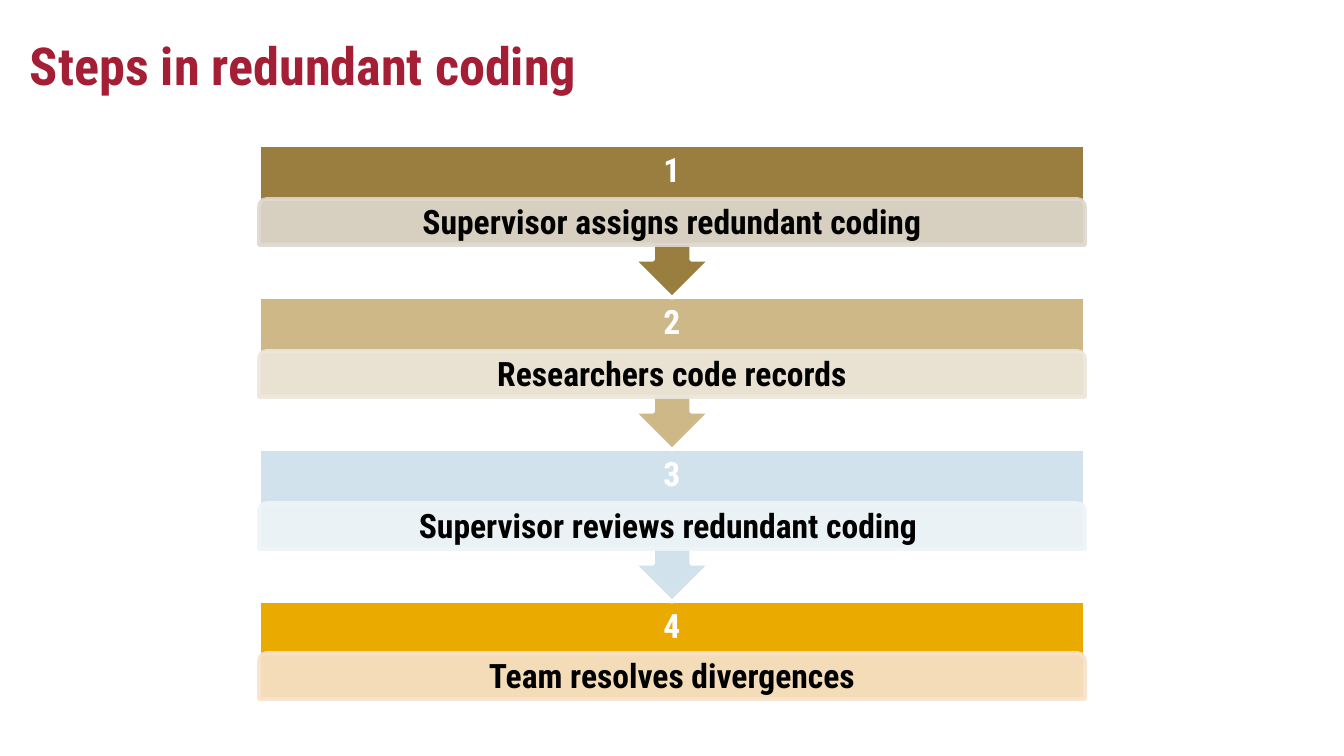
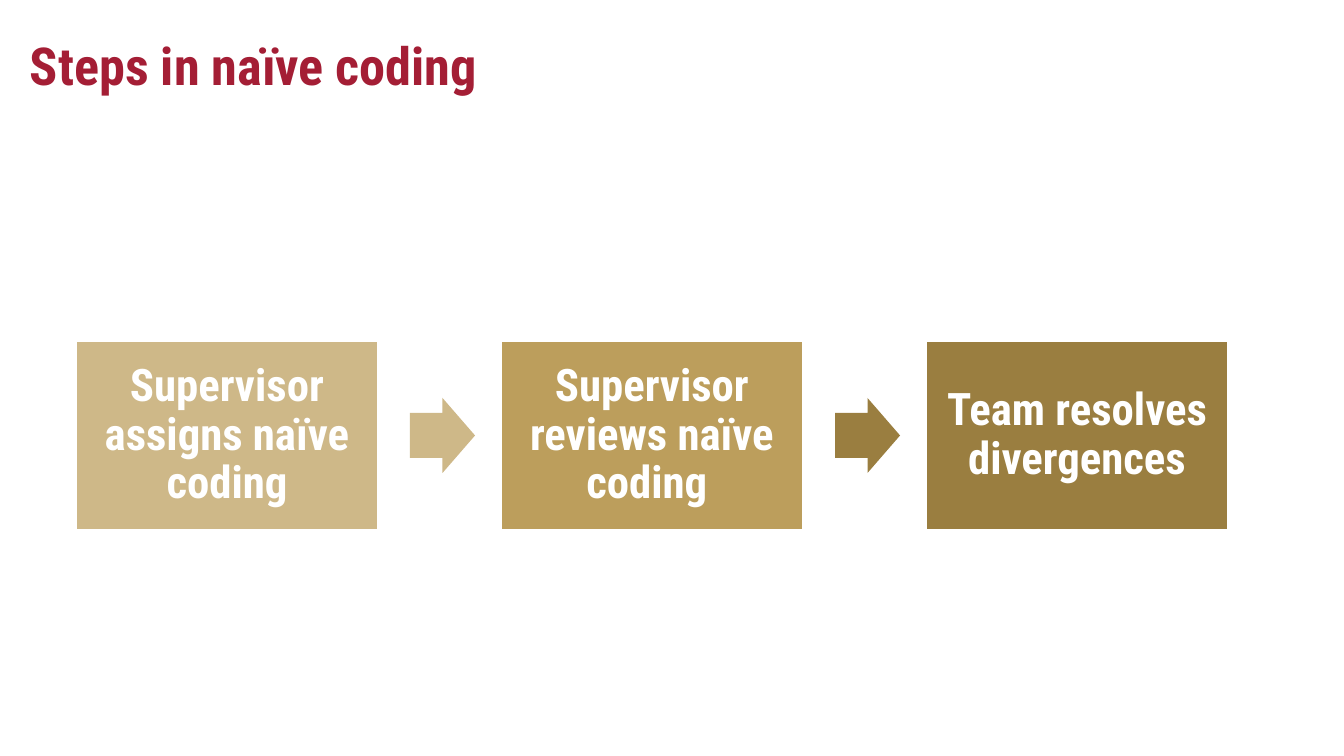
from dataclasses import dataclass

from lxml import etree
from pptx import Presentation
from pptx.dml.color import RGBColor
from pptx.enum.shapes import MSO_SHAPE
from pptx.enum.text import MSO_ANCHOR, MSO_AUTO_SIZE, PP_ALIGN
from pptx.oxml.ns import qn
from pptx.util import Pt

RECTANGLE = MSO_SHAPE.RECTANGLE
CALLOUT = MSO_SHAPE.UP_ARROW_CALLOUT
LABEL_BAR = MSO_SHAPE.ROUND_2_SAME_RECTANGLE
RIGHT_ARROW = MSO_SHAPE.RIGHT_ARROW
TOP, MIDDLE = MSO_ANCHOR.TOP, MSO_ANCHOR.MIDDLE
LEFT, CENTER = PP_ALIGN.LEFT, PP_ALIGN.CENTER
NO_AUTOFIT = MSO_AUTO_SIZE.NONE

PX = 6804  # EMU per px, 1344 px across ten inches


@dataclass(frozen=True)
class Theme:
    font: str = "Roboto Condensed"
    title_size: int = 28
    step_size: int = 18
    box_size: int = 24
    crimson: str = "A41E35"
    white: str = "FFFFFF"
    black: str = "000000"
    bronze: str = "9A7E40"
    gold: str = "BC9E5C"
    sand: str = "CEB888"
    ice: str = "D1E2EC"
    amber: str = "EAAA00"
    pale_bronze: str = "DED8CF"
    pale_sand: str = "EDE6DA"
    pale_ice: str = "EEF4F8"
    pale_amber: str = "F7E2CC"


THEME = Theme()


def add_block(slide, kind, left, top, width, height, fill, line=None, opacity=100):
    shape = slide.shapes.add_shape(kind, left * PX, top * PX, width * PX, height * PX)
    shape.shadow.inherit = False
    shape.fill.solid()
    shape.fill.fore_color.rgb = RGBColor.from_string(fill)
    if line:
        shape.line.color.rgb = RGBColor.from_string(line)
        shape.line.width = Pt(2)
    else:
        shape.line.fill.background()
    if opacity < 100:
        for color in shape._element.spPr.iter(qn("a:srgbClr")):
            etree.SubElement(color, qn("a:alpha"), val=str(opacity * 1000))
    return shape


def write_text(shape, text, size, color, margin_x=13, margin_y=13,
               anchor=MIDDLE, align=CENTER, spacing=0.9):
    frame = shape.text_frame
    frame.word_wrap = True
    frame.auto_size = NO_AUTOFIT
    frame.vertical_anchor = anchor
    frame.margin_left = frame.margin_right = margin_x * PX
    frame.margin_top = frame.margin_bottom = margin_y * PX
    paragraph = frame.paragraphs[0]
    paragraph.alignment = align
    paragraph.line_spacing = spacing
    run = paragraph.add_run()
    run.text = text
    run.font.name = THEME.font
    run.font.size = Pt(size)
    run.font.bold = True
    run.font.color.rgb = RGBColor.from_string(color)


presentation = Presentation()
presentation.slide_width = 1344 * PX
presentation.slide_height = 756 * PX

# Slides with their shared title style
slides = []
for heading in ("Steps in redundant coding", "Steps in naïve coding"):
    slide = presentation.slides.add_slide(presentation.slide_layouts[5])
    title = slide.shapes.title
    title.left, title.top = 17 * PX, 20 * PX
    title.width, title.height = 1231 * PX, 85 * PX
    write_text(title, heading, THEME.title_size, THEME.crimson,
               anchor=TOP, align=LEFT, spacing=1.0)
    slides.append(slide)
redundant_slide, naive_slide = slides

# Redundant coding: stacked steps, drawn from the last one up
redundant_steps = [
    ("Supervisor assigns redundant coding", THEME.bronze, THEME.pale_bronze),
    ("Researchers code records", THEME.sand, THEME.pale_sand),
    ("Supervisor reviews redundant coding ", THEME.ice, THEME.pale_ice),
    ("Team resolves divergences", THEME.amber, THEME.pale_amber),
]
step_left, step_width, step_pitch = 259, 826, 152
last = len(redundant_steps) - 1
for index in range(last, -1, -1):
    text, fill, pale_fill = redundant_steps[index]
    step_top = 145 + index * step_pitch
    if index == last:
        kind, step_height, bar_offset = RECTANGLE, 99, 52
    else:
        kind, step_height, bar_offset = CALLOUT, 153, 54
    step = add_block(redundant_slide, kind, step_left, step_top,
                     step_width, step_height, fill, THEME.white)
    if kind == CALLOUT:
        step.rotation = 180

    number = redundant_slide.shapes.add_textbox(
        (step_left + 27) * PX, step_top * PX, (step_width - 54) * PX, 54 * PX)
    write_text(number, str(index + 1), THEME.step_size, THEME.white, 19, 19)

    bar = add_block(redundant_slide, LABEL_BAR, step_left, step_top + bar_offset,
                    step_width, 46, pale_fill, pale_fill, opacity=90)
    write_text(bar, text, THEME.step_size, THEME.black, 19, 4)

# Naïve coding: a row of boxes joined by block arrows
naive_steps = [
    ("Supervisor assigns naïve coding", THEME.sand, THEME.sand),
    ("Supervisor reviews naïve coding ", THEME.gold, THEME.bronze),
    ("Team resolves divergences", THEME.bronze, None),
]
box_top, box_width, box_height, box_pitch = 340, 304, 191, 425
arrow_width, arrow_height = 65, 75
for index, (text, fill, arrow_fill) in enumerate(naive_steps):
    box_left = 75 + index * box_pitch
    box = add_block(naive_slide, RECTANGLE, box_left, box_top,
                    box_width, box_height, fill, THEME.white)
    write_text(box, text, THEME.box_size, THEME.white)
    if arrow_fill:
        arrow = add_block(naive_slide, RIGHT_ARROW, box_left + box_width + 31,
                          box_top + (box_height - arrow_height) // 2,
                          arrow_width, arrow_height, arrow_fill)
        arrow.adjustments[0] = 0.6

presentation.save("out.pptx")
